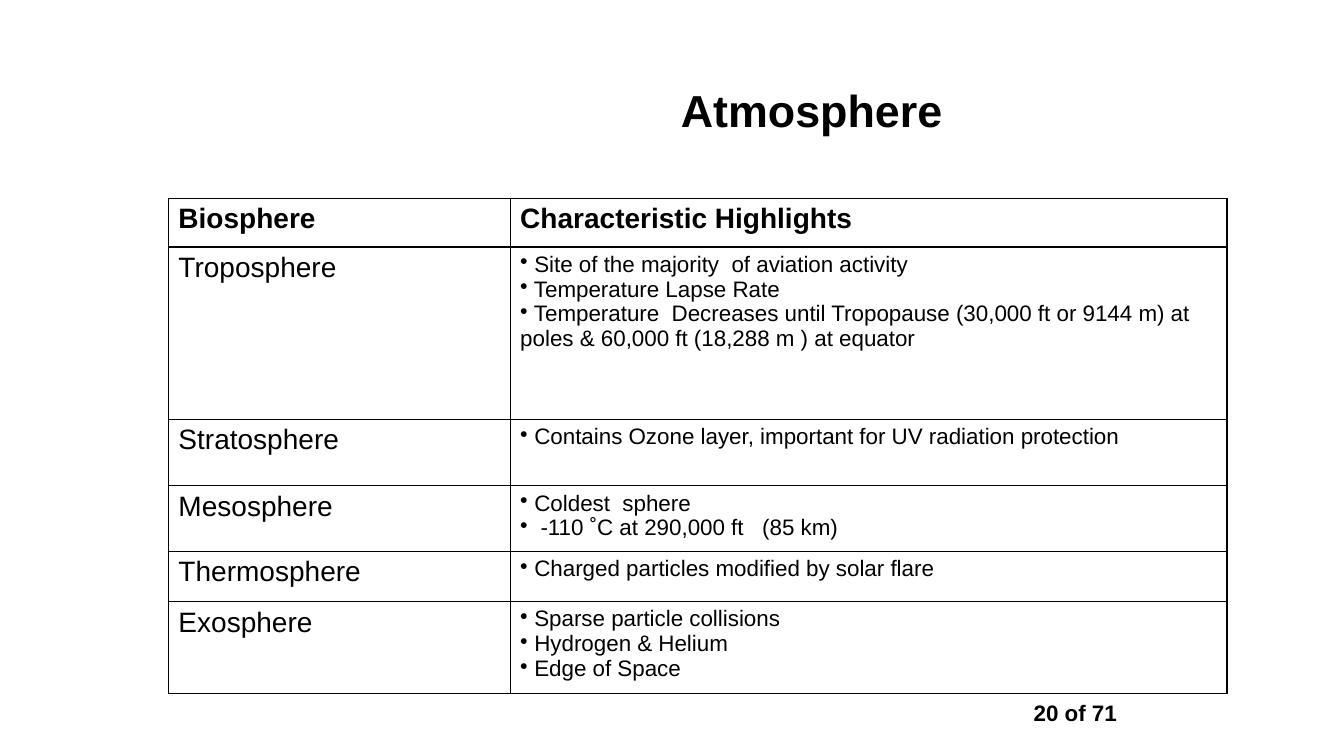
from dataclasses import dataclass

from lxml.etree import SubElement
from pptx import Presentation
from pptx.dml.color import RGBColor
from pptx.enum.text import MSO_ANCHOR as Anchor, PP_ALIGN as Align
from pptx.oxml.ns import qn
from pptx.util import Inches, Pt


@dataclass(frozen=True)
class Theme:
    """Font, colours and type sizes of the slide."""
    font: str = "Arial"
    ink: str = "000000"
    paper: str = "FFFFFF"
    title: int = 32
    layer: int = 20
    highlight: int = 16
    border: int = 1


THEME = Theme()
HEADINGS = ("Biosphere", "Characteristic Highlights")
LAYERS = [
    ("Troposphere", 1.71, [
        " Site of the majority  of aviation activity",
        " Temperature Lapse Rate",
        " Temperature  Decreases until Tropopause (30,000 ft or 9144 m) at "
        "poles & 60,000 ft (18,288 m ) at equator",
    ]),
    ("Stratosphere", 0.66, [
        " Contains Ozone layer, important for UV radiation protection",
    ]),
    ("Mesosphere", 0.65, [
        " Coldest  sphere",
        "  -110 ˚C at 290,000 ft   (85 km)",
    ]),
    ("Thermosphere", 0.5, [" Charged particles modified by solar flare"]),
    ("Exosphere", 0.91, [
        " Sparse particle collisions",
        " Hydrogen & Helium",
        " Edge of Space",
    ]),
]
HEADING_HEIGHT = 0.48
COLUMN_WIDTHS = (3.39, 7.11)


def write(frame, *lines, size, bold=False, align=Align.LEFT, bullet=None, spacing=None):
    """Write each line as a formatted paragraph of the text frame."""
    for index, line in enumerate(lines):
        paragraph = frame.add_paragraph() if index else frame.paragraphs[0]
        paragraph.alignment = align
        paragraph.line_spacing = spacing
        if bullet:
            properties = paragraph._p.get_or_add_pPr()
            properties.set("marL", "0")
            properties.set("indent", "0")
            SubElement(properties, qn("a:buChar"), char=bullet)
        run = paragraph.add_run()
        run.text = line
        run.font.name = THEME.font
        run.font.size = Pt(size)
        run.font.bold = bold
        run.font.color.rgb = RGBColor.from_string(THEME.ink)


def add_label(slide, text, left, top, width, height, anchor=Anchor.TOP, **style):
    """Add a centred bold line of text in its own box."""
    frame = slide.shapes.add_textbox(
        Inches(left), Inches(top), Inches(width), Inches(height)).text_frame
    frame.word_wrap = True
    frame.vertical_anchor = anchor
    write(frame, text, bold=True, align=Align.CENTER, **style)


def outline(cell):
    """Draw the four borders of a cell and fill it with the paper colour."""
    properties = cell._tc.get_or_add_tcPr()
    for side in ("a:lnL", "a:lnR", "a:lnT", "a:lnB"):
        border = SubElement(properties, qn(side), w=str(Pt(THEME.border)))
        fill = SubElement(border, qn("a:solidFill"))
        SubElement(fill, qn("a:srgbClr"), val=THEME.ink)
    cell.fill.solid()
    cell.fill.fore_color.rgb = RGBColor.from_string(THEME.paper)


def add_layer_table(slide, left, top):
    """Add the table of atmospheric layers and their highlights."""
    heights = [HEADING_HEIGHT] + [height for _, height, _ in LAYERS]
    table = slide.shapes.add_table(
        len(heights), len(COLUMN_WIDTHS), Inches(left), Inches(top),
        Inches(sum(COLUMN_WIDTHS)), Inches(sum(heights))).table
    table.horz_banding = False
    table.first_row = False
    for column, width in zip(table.columns, COLUMN_WIDTHS):
        column.width = Inches(width)
    for row, height in zip(table.rows, heights):
        row.height = Inches(height)
    for cell in table.iter_cells():
        outline(cell)
    for column, heading in enumerate(HEADINGS):
        write(table.cell(0, column).text_frame, heading, size=THEME.layer, bold=True)
    for row, (layer, _, highlights) in enumerate(LAYERS, start=1):
        write(table.cell(row, 0).text_frame, layer, size=THEME.layer)
        write(table.cell(row, 1).text_frame, *highlights,
              size=THEME.highlight, bullet="•")


def main():
    """Build the atmosphere slide and save it."""
    deck = Presentation()
    deck.slide_width, deck.slide_height = Inches(13.33), Inches(7.5)
    slide = deck.slides.add_slide(deck.slide_layouts[6])
    add_label(slide, "Atmosphere", 3.44, 0.42, 9.22, 1.33,
              anchor=Anchor.MIDDLE, size=THEME.title)
    add_layer_table(slide, 1.67, 1.97)
    add_label(slide, "20 of 71", 10.08, 6.92, 1.17, 0.34,
              size=THEME.highlight, spacing=0.9)
    deck.save("out.pptx")


if __name__ == "__main__":
    main()
